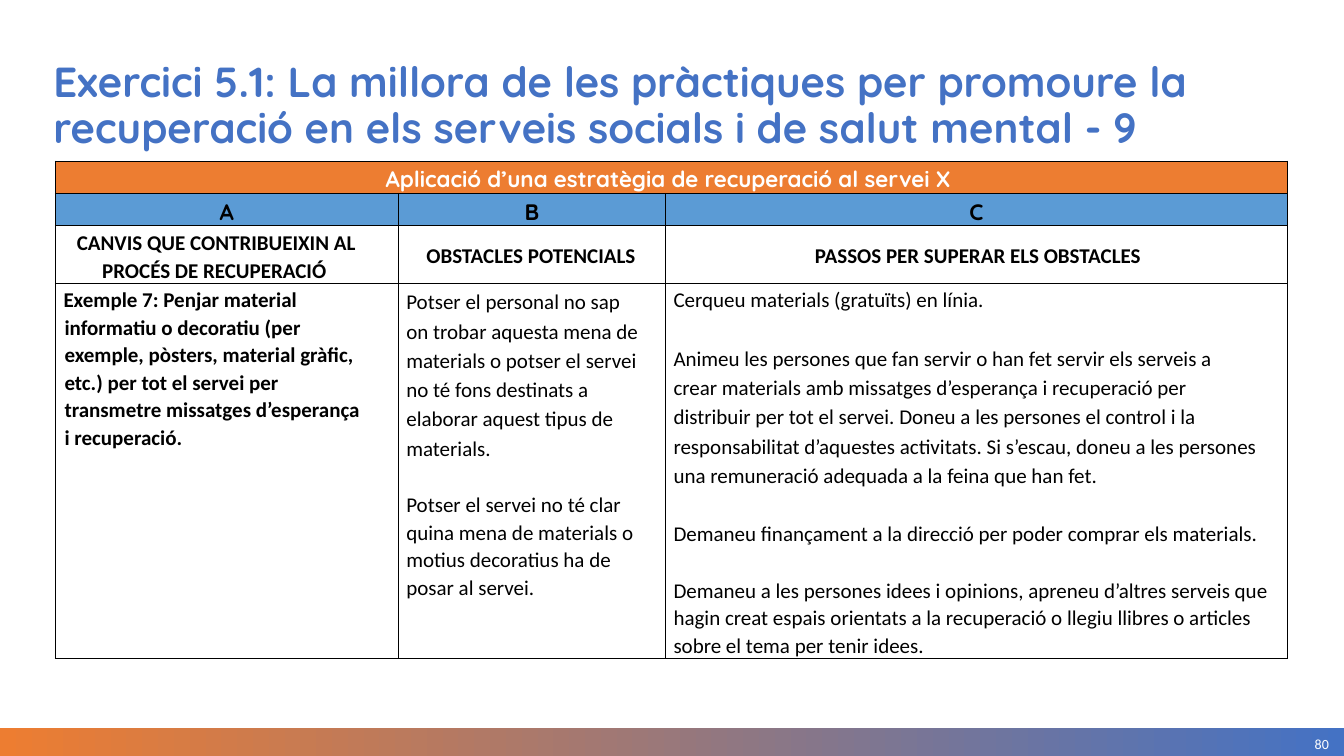
from dataclasses import dataclass

import pptx
import pptx.dml.color
import pptx.enum.shapes
import pptx.enum.text
import pptx.oxml
import pptx.oxml.ns
import pptx.util

Inches = pptx.util.Inches
Pt = pptx.util.Pt
Align = pptx.enum.text.PP_ALIGN
Anchor = pptx.enum.text.MSO_ANCHOR


@dataclass(frozen=True)
class Theme:
    orange: str = "ED7D31"
    blue: str = "4472C4"
    light_blue: str = "5B9BD5"
    white: str = "FFFFFF"
    black: str = "000000"
    heading_font: str = "Quicksand"
    body_font: str = "Calibri"
    title_size: float = 30
    band_size: float = 16
    body_size: float = 15
    number_size: float = 10
    border_width: float = 1
    paragraph_gap: float = 20.7


THEME = Theme()


@dataclass(frozen=True)
class TextStyle:
    font: str
    size: float
    color: str
    bold: bool = False


@dataclass(frozen=True)
class Passage:
    text: str
    spacing: float = 1.07
    align: Align = Align.LEFT
    margin: float = 0
    indent: float = -0.01
    right: float = 0


@dataclass(frozen=True)
class RowFormat:
    height: float
    style: TextStyle
    anchor: Anchor
    insets: tuple[float, float, float, float]
    fill: str | None = None


TITLE = TextStyle(THEME.heading_font, THEME.title_size, THEME.blue, True)
BAND = TextStyle(THEME.heading_font, THEME.band_size, THEME.white, True)
LETTER = TextStyle(THEME.heading_font, THEME.band_size, THEME.black, True)
BOLD = TextStyle(THEME.body_font, THEME.body_size, THEME.black, True)
BODY = TextStyle(THEME.body_font, THEME.body_size, THEME.black)
NUMBER = TextStyle(THEME.body_font, THEME.number_size, THEME.white)

BAND_INSETS = (0.09, 0, 0.09, 0)
BODY_INSETS = (0.08, 0.03, 0.05, 0)
COLUMN_WIDTHS = (3.4, 2.65, 6.17)
ROWS = (
    RowFormat(0.32, BAND, Anchor.MIDDLE, BAND_INSETS, THEME.orange),
    RowFormat(0.32, LETTER, Anchor.MIDDLE, BAND_INSETS, THEME.light_blue),
    RowFormat(0.57, BOLD, Anchor.MIDDLE, BODY_INSETS),
    RowFormat(3.72, BODY, Anchor.TOP, BODY_INSETS),
)


def band(text: str) -> list[Passage]:
    return [Passage(text, 1.15, Align.CENTER, 0, 0)]


def heading(text: str, right: float = 0) -> list[Passage]:
    return [Passage(text, 1.07, Align.CENTER, 0.01, right=right)]


CONTENT = (
    (band("Aplicació d’una estratègia de recuperació al servei X "),),
    tuple(band(letter) for letter in "ABC"),
    (
        heading("CANVIS QUE CONTRIBUEIXIN AL PROCÉS DE RECUPERACIÓ ", 0.24),
        heading("OBSTACLES POTENCIALS "),
        heading("PASSOS PER SUPERAR ELS OBSTACLES"),
    ),
    (
        [Passage("Exemple 7: Penjar material informatiu o decoratiu (per exemple, pòsters, "
                 "material gràfic, etc.) per tot el servei per transmetre missatges "
                 "d’esperança i recuperació.", margin=0.01, right=0.24)],
        [
            Passage("Potser el personal no sap on trobar aquesta mena de materials o potser "
                    "el servei no té fons destinats a elaborar aquest tipus de materials.",
                    1.14, right=0.22),
            Passage("Potser el servei no té clar quina mena de materials o motius decoratius "
                    "ha de posar al servei."),
        ],
        [
            Passage("Cerqueu materials (gratuïts) en línia."),
            Passage("Animeu les persones que fan servir o han fet servir els serveis a crear "
                    "materials amb missatges d’esperança i recuperació per distribuir per tot "
                    "el servei. Doneu a les persones el control i la responsabilitat d’aquestes "
                    "activitats. Si s’escau, doneu a les persones una remuneració adequada a la "
                    "feina que han fet.", 1.14, right=0.25),
            Passage("Demaneu finançament a la direcció per poder comprar els materials. ",
                    1.15, Align.JUSTIFY),
            Passage("Demaneu a les persones idees i opinions, apreneu d’altres serveis que hagin "
                    "creat espais orientats a la recuperació o llegiu llibres o articles sobre "
                    "el tema per tenir idees."),
        ],
    ),
)


def rgb(color: str) -> pptx.dml.color.RGBColor:
    return pptx.dml.color.RGBColor.from_string(color)


def apply(target: object, values: dict[str, object]) -> None:
    for name, value in values.items():
        setattr(target, name, value)


def write(frame: pptx.text.text.TextFrame, passages: list[Passage], style: TextStyle) -> None:
    for index, passage in enumerate(passages):
        para = frame.add_paragraph() if index else frame.paragraphs[0]
        properties = para._p.get_or_add_pPr()
        indents = {"marL": passage.margin, "marR": passage.right, "indent": passage.indent}
        for name, length in indents.items():
            properties.set(name, str(Inches(length)))
        apply(para, {
            "alignment": passage.align,
            "line_spacing": passage.spacing,
            "space_before": Pt(THEME.paragraph_gap if index else 0),
            "space_after": Pt(0),
        })
        span = para.add_run()
        span.text = passage.text
        apply(span.font, {"name": style.font, "size": Pt(style.size), "bold": style.bold})
        span.font.color.rgb = rgb(style.color)


def add_borders(cell: pptx.table._Cell) -> None:
    properties = cell._tc.get_or_add_tcPr()
    for side in ("lnL", "lnR", "lnT", "lnB"):
        properties.append(pptx.oxml.parse_xml(
            f'<a:{side} {pptx.oxml.ns.nsdecls("a")} w="{Pt(THEME.border_width)}">'
            f'<a:solidFill><a:srgbClr val="{THEME.black}"/></a:solidFill></a:{side}>'))


def add_footer(page: pptx.slide.Slide) -> None:
    bar = page.shapes.add_shape(pptx.enum.shapes.MSO_SHAPE.RECTANGLE, Inches(0), Inches(7.22),
                                Inches(13.33), Inches(0.28))
    bar.shadow.inherit = False
    bar.line.fill.background()
    bar.fill.gradient()
    bar.fill.gradient_angle = 0
    for stop, color, position in zip(bar.fill.gradient_stops, (THEME.orange, THEME.blue), (0, 1)):
        stop.color.rgb = rgb(color)
        stop.position = position
    box = page.shapes.add_textbox(Inches(11.38), Inches(7.26), Inches(1.8), Inches(0.24))
    apply(box.text_frame, {
        "word_wrap": True, "vertical_anchor": Anchor.MIDDLE,
        "margin_left": 0, "margin_top": 0, "margin_right": 0, "margin_bottom": 0,
    })
    write(box.text_frame, [Passage("80", 1.0, Align.RIGHT, 0, 0)], NUMBER)


def add_strategy_table(page: pptx.slide.Slide) -> None:
    table = page.shapes.add_table(
        len(ROWS), len(COLUMN_WIDTHS), Inches(0.55), Inches(1.6),
        Inches(sum(COLUMN_WIDTHS)), Inches(sum(row.height for row in ROWS))).table
    apply(table, {"first_row": False, "horz_banding": False})
    for column, width in zip(table.columns, COLUMN_WIDTHS):
        column.width = Inches(width)
    table.cell(0, 0).merge(table.cell(0, len(COLUMN_WIDTHS) - 1))
    for row_index, (row, texts) in enumerate(zip(ROWS, CONTENT)):
        table.rows[row_index].height = Inches(row.height)
        for column_index in range(len(COLUMN_WIDTHS)):
            cell = table.cell(row_index, column_index)
            left, top, right, bottom = map(Inches, row.insets)
            apply(cell, {
                "vertical_anchor": row.anchor, "margin_left": left, "margin_top": top,
                "margin_right": right, "margin_bottom": bottom,
            })
            add_borders(cell)
            if row.fill:
                cell.fill.solid()
                cell.fill.fore_color.rgb = rgb(row.fill)
            else:
                cell.fill.background()
            if column_index < len(texts):
                style = BOLD if column_index == 0 and row.style == BODY else row.style
                write(cell.text_frame, texts[column_index], style)


def main() -> None:
    deck = pptx.Presentation()
    apply(deck, {"slide_width": Inches(13.33), "slide_height": Inches(7.5)})
    page = deck.slides.add_slide(deck.slide_layouts[5])
    title = page.shapes.title
    apply(title, {"left": Inches(0.43), "top": Inches(0.56),
                  "width": Inches(12.4), "height": Inches(0.59)})
    apply(title.text_frame, {"word_wrap": True, "vertical_anchor": Anchor.TOP,
                             "auto_size": pptx.enum.text.MSO_AUTO_SIZE.NONE})
    write(title.text_frame, [Passage(
        "Exercici 5.1: La millora de les pràctiques per promoure la recuperació en els serveis "
        "socials i de salut mental - 9", 0.9, Align.LEFT, 0, 0)], TITLE)
    add_footer(page)
    add_strategy_table(page)
    deck.save("out.pptx")


if __name__ == "__main__":
    main()
